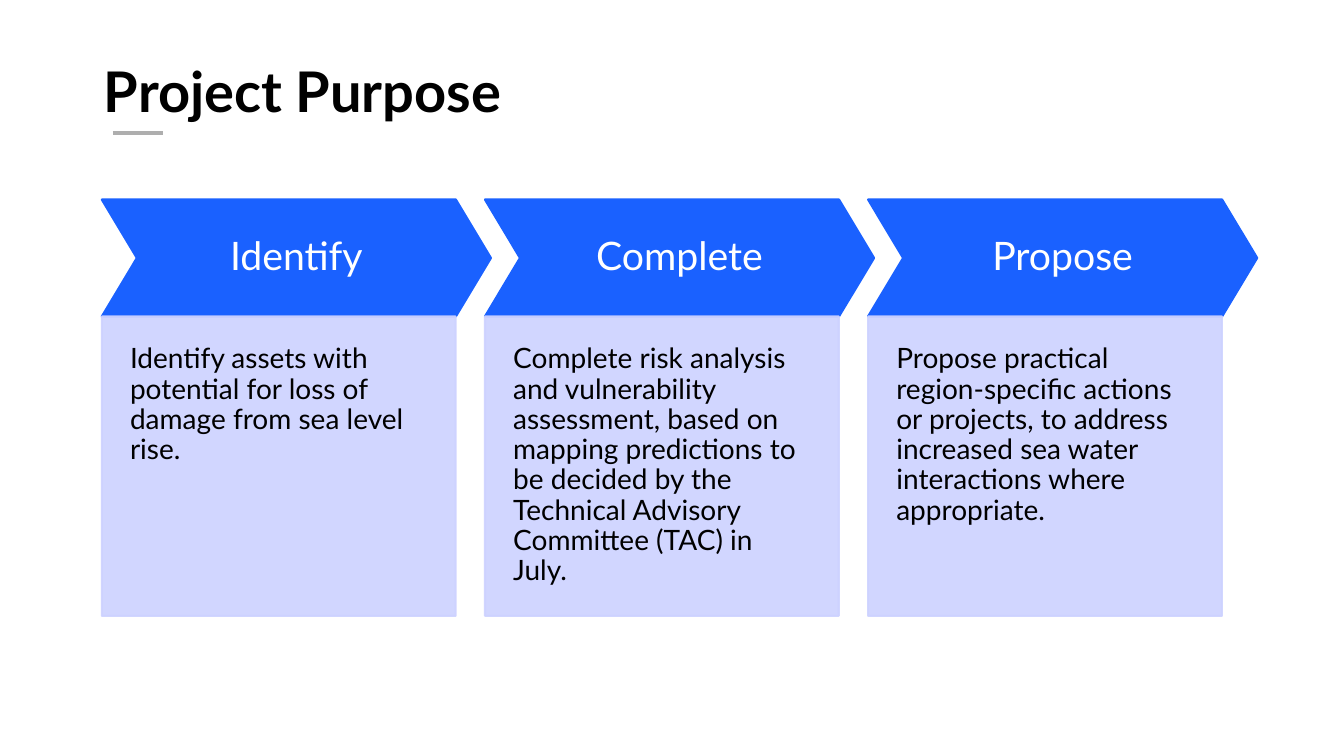
from lxml import etree
from pptx import Presentation
from pptx import util as u
from pptx.dml.color import RGBColor
from pptx.enum import shapes, text
from pptx.oxml.ns import qn

PX = 9144
STEPS = [
    ("Identify", "Identify assets with potential for loss of damage from sea level rise."),
    ("Complete", "Complete risk analysis and vulnerability assessment, based on mapping "
     "predictions to be decided by the Technical Advisory Committee (TAC) in July."),
    ("Propose", "Propose practical region-specific actions or projects, to address "
     "increased sea water interactions where appropriate."),
]


def px(length):
    return u.Emu(length * PX)


def rgb(value):
    return RGBColor.from_string(value)


class SlideBuilder:
    """Holds the style and the current slide, and draws its elements."""

    font = "Lato"
    black, white, grey = "000000", "FFFFFF", "AEAEAE"
    blue, lavender = "1A61FF", "CDD2FF"

    def __init__(self, presentation):
        self.slide = presentation.slides.add_slide(presentation.slide_layouts[5])

    def set_text(self, shape, words, size, color, insets, anchor, align, bold=False):
        frame = shape.text_frame
        frame.text = words
        left, top, right, bottom = map(px, insets)
        frame_format = {
            "word_wrap": True, "auto_size": text.MSO_AUTO_SIZE.NONE,
            "vertical_anchor": anchor, "margin_left": left, "margin_top": top,
            "margin_right": right, "margin_bottom": bottom,
        }
        for name, value in frame_format.items():
            setattr(frame, name, value)
        paragraph = frame.paragraphs[0]
        for name, value in {"alignment": align, "line_spacing": 0.9}.items():
            setattr(paragraph, name, value)
        font = paragraph.runs[0].font
        for name, value in {"name": self.font, "size": u.Pt(size), "bold": bold}.items():
            setattr(font, name, value)
        font.color.rgb = rgb(color)

    def title(self, words, box):
        title = self.slide.shapes.title
        for name, value in zip(("left", "top", "width", "height"), box):
            setattr(title, name, px(value))
        self.set_text(title, words, 40, self.black, (10, 5, 10, 5),
                      text.MSO_ANCHOR.BOTTOM, text.PP_ALIGN.LEFT, bold=True)

    def rule(self, left, right, top):
        rule = self.slide.shapes.add_connector(
            shapes.MSO_CONNECTOR.STRAIGHT, px(left), px(top), px(right), px(top))
        rule.line.color.rgb = rgb(self.grey)
        rule.line.width = u.Pt(3)
        etree.SubElement(rule.element.spPr, qn("a:effectLst"))

    def block(self, kind, box, color, opacity=100):
        block = self.slide.shapes.add_shape(kind, *map(px, box))
        block.shadow.inherit = False
        block.fill.solid()
        block.fill.fore_color.rgb = rgb(color)
        block.line.color.rgb = rgb(color)
        block.line.width = u.Pt(1.5)
        if opacity < 100:
            for node in block.element.spPr.iter(qn("a:srgbClr")):
                etree.SubElement(node, qn("a:alpha"), val=str(opacity * 1000))
        return block

    def chevron(self, words, box):
        chevron = self.block(shapes.MSO_SHAPE.CHEVRON, box, self.blue)
        chevron.adjustments[0] = 0.3
        self.set_text(chevron, words, 28, self.white, (14, 14, 14, 14),
                      text.MSO_ANCHOR.MIDDLE, text.PP_ALIGN.CENTER)

    def panel(self, words, box):
        panel = self.block(shapes.MSO_SHAPE.RECTANGLE, box, self.lavender, opacity=90)
        self.set_text(panel, words, 20, self.black, (28, 28, 28, 55),
                      text.MSO_ANCHOR.TOP, text.PP_ALIGN.LEFT)


def main():
    presentation = Presentation()
    presentation.slide_width, presentation.slide_height = px(1333), px(750)
    builder = SlideBuilder(presentation)
    builder.rule(112, 162, 132)
    builder.title("Project Purpose", (93, 31, 1147, 98))
    for index, (heading, detail) in enumerate(STEPS):
        left = 101 + 380 * index
        builder.chevron(heading, (left, 198, 386, 116))
        builder.panel(detail, (left, 314, 351, 297))
    presentation.save("out.pptx")


if __name__ == "__main__":
    main()
